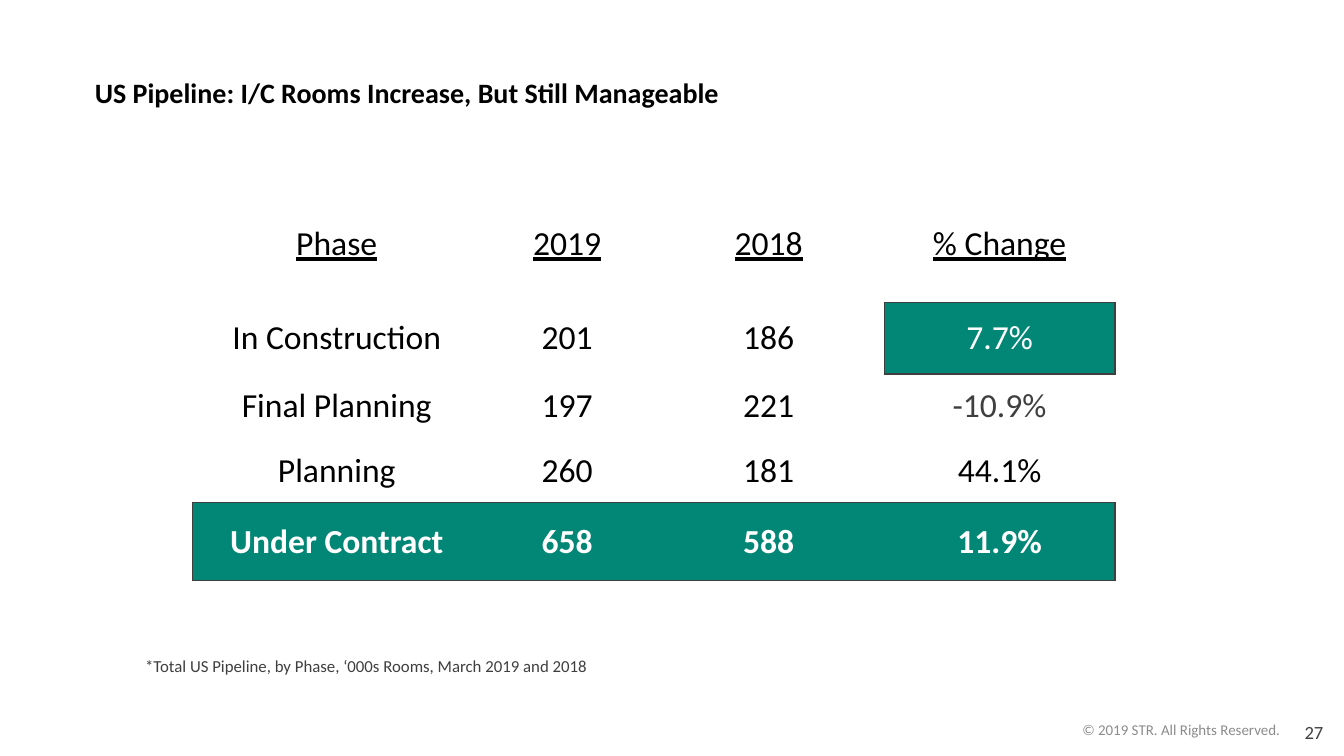
from lxml.etree import SubElement
from pptx import Presentation
from pptx.dml.color import RGBColor
from pptx.enum.text import MSO_ANCHOR, PP_ALIGN
from pptx.oxml import parse_xml
from pptx.oxml.ns import nsdecls, qn
from pptx.util import Inches, Pt

TITLE = "US Pipeline: I/C Rooms Increase, But Still Manageable"
PIPELINE = [
    ("Phase", "2019", "2018", "% Change"),
    ("In Construction", "201", "186", "7.7%"),
    ("Final Planning", "197", "221", "-10.9%"),
    ("Planning", "260", "181", "44.1%"),
    ("Under Contract", "658", "588", "11.9%"),
]
FOOTNOTE = "*Total US Pipeline, by Phase, ‘000s Rooms, March 2019 and 2018"
COPYRIGHT = "© 2019 STR. All Rights Reserved. "
PAGE_NUMBER = "27"

COLUMN_WIDTHS = [2.86, 1.71, 2.29, 2.29]
ROW_HEIGHTS = [0.82, 0.71, 0.64, 0.64, 0.77]
TABLE_LEFT, TABLE_TOP = 1.91, 2.18
TOTAL_ROW = len(PIPELINE) - 1
HIGHLIGHTS = {(1, 3)} | {(TOTAL_ROW, column) for column in range(len(COLUMN_WIDTHS))}
DECLINE = (2, 3)

THEME = {
    "font": "Calibri",
    "black": "000000",
    "white": "FFFFFF",
    "dark": "3F3F3F",
    "gray": "8C8C8C",
    "teal": "028675",
    "title": 20,
    "table": 24,
    "footnote": 12,
    "copyright": 10.7,
    "page": 13.3,
}
SIDES = {"lnL": (0, -1), "lnR": (0, 1), "lnT": (-1, 0), "lnB": (1, 0)}


def write_text(frame, text, size, color, align=PP_ALIGN.LEFT, **styles):
    paragraph = frame.paragraphs[0]
    paragraph.alignment = align
    run = paragraph.add_run()
    run.text = text
    values = {"name": THEME["font"], "size": Pt(THEME[size]), **styles}
    for attribute, value in values.items():
        setattr(run.font, attribute, value)
    run.font.color.rgb = RGBColor.from_string(THEME[color])


def place(shape, left, top, width, height):
    box = {"left": left, "top": top, "width": width, "height": height}
    for attribute, value in box.items():
        setattr(shape, attribute, Inches(value))


def add_label(slide, box, text, size, color, align=PP_ALIGN.LEFT):
    label = slide.shapes.add_textbox(*map(Inches, box))
    label.text_frame.word_wrap = True
    write_text(label.text_frame, text, size, color, align)


def set_borders(cell, position):
    row, column = position
    properties = cell._tc.get_or_add_tcPr()
    for index, (side, (down, right)) in enumerate(SIDES.items()):
        neighbour = (row + down, column + right)
        outlined = (position in HIGHLIGHTS) != (neighbour in HIGHLIGHTS)
        line = parse_xml(f'<a:{side} {nsdecls("a")} w="{Pt(1)}"/>')
        if outlined:
            fill = SubElement(line, qn("a:solidFill"))
            SubElement(fill, qn("a:srgbClr"), val=THEME["dark"])
        else:
            SubElement(line, qn("a:noFill"))
        properties.insert(index, line)


def fill_cell(cell, position, text):
    row = position[0]
    highlighted = position in HIGHLIGHTS
    color = "white" if highlighted else "dark" if position == DECLINE else "black"
    values = {
        "margin_left": Inches(0.09),
        "margin_right": Inches(0.09),
        "margin_top": Inches(0.04),
        "margin_bottom": Inches(0.04),
        "vertical_anchor": MSO_ANCHOR.MIDDLE if row else MSO_ANCHOR.TOP,
    }
    for attribute, value in values.items():
        setattr(cell, attribute, value)
    write_text(cell.text_frame, text, "table", color, PP_ALIGN.CENTER,
               bold=row == TOTAL_ROW, underline=row == 0)
    if highlighted:
        cell.fill.solid()
        cell.fill.fore_color.rgb = RGBColor.from_string(THEME["teal"])
    else:
        cell.fill.background()
    set_borders(cell, position)


def add_pipeline_table(slide):
    box = (TABLE_LEFT, TABLE_TOP, sum(COLUMN_WIDTHS), sum(ROW_HEIGHTS))
    table = slide.shapes.add_table(
        len(ROW_HEIGHTS), len(COLUMN_WIDTHS), *map(Inches, box)).table
    table.first_row = False
    table.horz_banding = False
    for column, width in zip(table.columns, COLUMN_WIDTHS):
        column.width = Inches(width)
    for row, height in zip(table.rows, ROW_HEIGHTS):
        row.height = Inches(height)
    for row, texts in enumerate(PIPELINE):
        for column, text in enumerate(texts):
            fill_cell(table.cell(row, column), (row, column), text)


def main():
    presentation = Presentation()
    presentation.slide_width = Inches(13.33)
    presentation.slide_height = Inches(7.5)
    slide = presentation.slides.add_slide(presentation.slide_layouts[5])

    title = slide.shapes.title
    place(title, 0.84, 0.36, 10.69, 1.12)
    title.text_frame.vertical_anchor = MSO_ANCHOR.MIDDLE
    write_text(title.text_frame, TITLE, "title", "black", bold=True)

    add_pipeline_table(slide)
    add_label(slide, (1.34, 6.46, 8.92, 0.5), FOOTNOTE, "footnote", "dark")
    add_label(slide, (9.33, 7.1, 3.5, 0.28), COPYRIGHT, "copyright", "gray", PP_ALIGN.RIGHT)
    add_label(slide, (12.84, 7.1, 0.49, 0.33), PAGE_NUMBER, "page", "dark")
    presentation.save("out.pptx")


if __name__ == "__main__":
    main()
